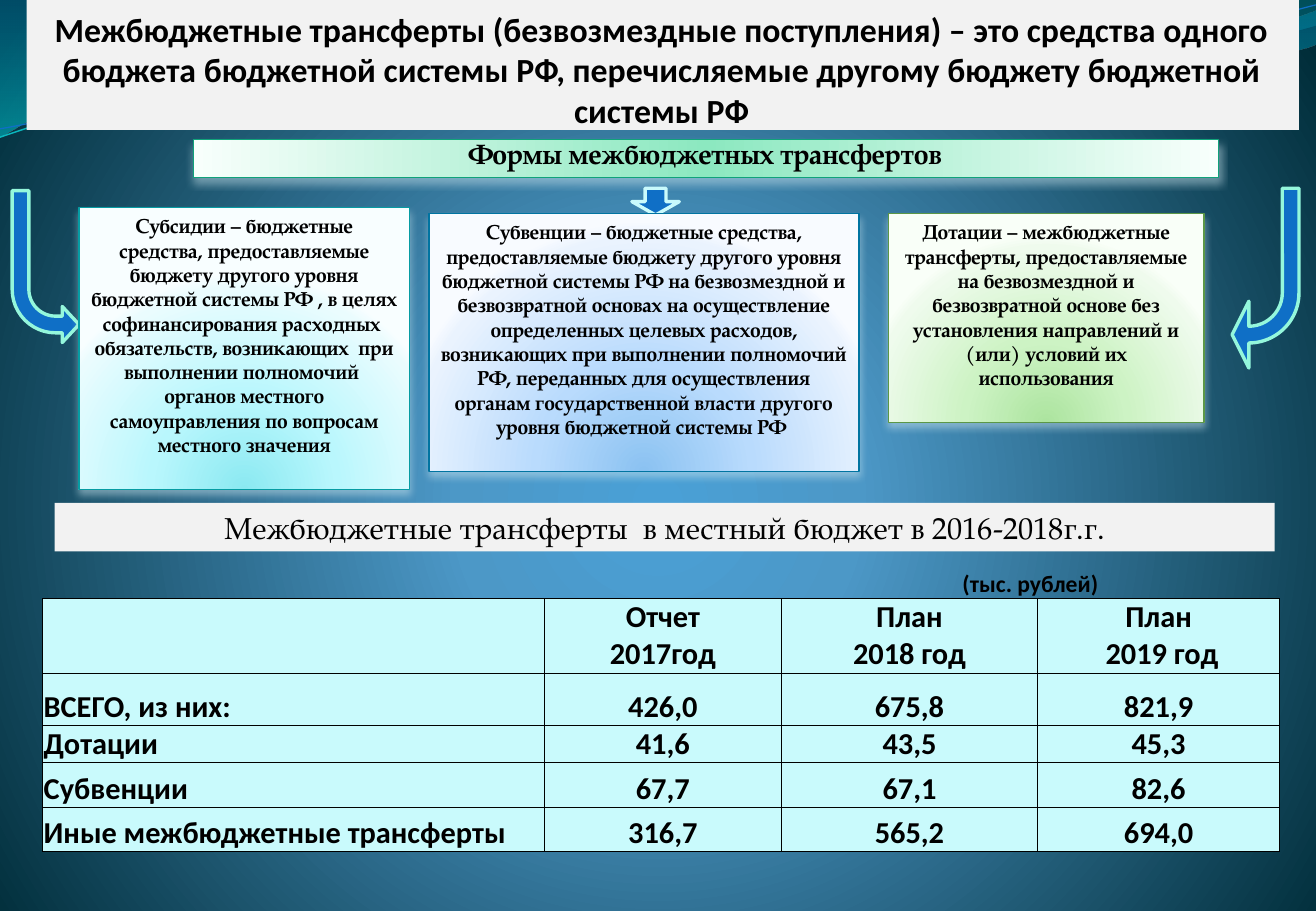
from pptx import Presentation
from pptx.dml.color import RGBColor
from pptx.enum.shapes import MSO_SHAPE as Shape
from pptx.enum.text import MSO_ANCHOR as Anchor, MSO_AUTO_SIZE as AutoSize, PP_ALIGN as Align
from pptx.oxml import parse_xml
from pptx.oxml.ns import nsdecls, qn
from pptx.util import Emu, Pt

PX = 9144
SERIF = "TeX Gyre Pagella"
SANS = "Calibri"
PANEL, CELL, ARROW, GLOW = "F2F2F2", "C9FAFC", "0F6FC6", "CFE8F0"
NO_GRID_STYLE = "{2D5ABB26-0587-4C30-8999-92F81FD0307C}"

WAVES = [
    ((0, 0), [[(477, 0)], [(515, 17), (719, 63), (822, 63)], [(924, 63), (1038, 26), (1083, 9)],
              [(1085, 36)], [(1065, 44), (942, 76), (808, 75)], [(674, 74), (414, 28), (279, 34)],
              [(140, 35), (50, 83), (-1, 113)]],
     [(0, "0074A1", 45), (100, "00C6CF", 55)]),
    ((519, -1), [[(552, 11), (739, 62), (833, 65)], [(927, 69), (1042, 32), (1083, 21)], [(1083, 0)]],
     [(0, "00A1A9", 30), (80, "008BBF", 45)]),
]
RIPPLES = [
    ((0, 113), [[(52, 95), (171, 58), (300, 53)], [(428, 47), (642, 88), (772, 79)],
                [(902, 69), (1017, 14), (1081, -4)]], "0AB8BF", 0.85),
    ((0, 106), [[(51, 98), (177, 62), (307, 57)], [(436, 52), (647, 83), (776, 74)],
                [(906, 66), (1020, 19), (1083, 4)]], "0F6FC6", 0.75),
]
TRANSFER_KINDS = [
    ((65, 171, 272, 232), ["8BE9F1", "B9F7FD", "EAFCFE", "F8FEFF"], "069CA3",
     "Субсидии – бюджетные\vсредства, предоставляемые бюджету другого уровня бюджетной системы РФ , "
     "в целях софинансирования расходных  обязательств, возникающих  при выполнении полномочий  "
     "органов местного самоуправления по вопросам местного значения"),
    ((731, 176, 260, 172), ["ACE49F", "CDF3C4", "EFFBED", "F9FFF8"], "5B9747",
     "Дотации – межбюджетные трансферты, предоставляемые на безвозмездной и безвозвратной основе "
     "без установления направлений и (или) условий их использования"),
    ((353, 176, 354, 212), ["8BC2F1", "B9DBFD", "EAF3FE", "F8FBFF"], "0074A1",
     "Субвенции – бюджетные средства, предоставляемые бюджету другого уровня бюджетной системы РФ "
     "на безвозмездной и безвозвратной основах на осуществление определенных целевых расходов, "
     "возникающих при выполнении полномочий РФ, переданных для осуществления органам "
     "государственной власти другого уровня бюджетной системы РФ "),
]
ARROWS = [
    (Shape.DOWN_ARROW, (520, 155, 39, 22), [0.44, 0.5], [], "C9FAFC"),
    (Shape.BENT_ARROW, (10, 157, 55, 125), [0.25, 0.27, 0.25, 0.65], ["flipV"], "94F7DC"),
    (Shape.BENT_ARROW, (1014, 155, 55, 148), [0.25, 0.5, 0.25, 0.75], ["flipH", "flipV"], "94F7DC"),
]
BUDGET_ROWS = [
    ["", "", "(тыс. рублей)", ""],
    ["", "Отчет\n2017год", "План\n2018 год", "План\n 2019 год"],
    ["ВСЕГО, из них:", "426,0", "675,8", "821,9"],
    ["Дотации", "41,6", "43,5", "45,3"],
    ["Субвенции", "67,7", "67,1", "82,6"],
    ["Иные межбюджетные трансферты", "316,7", "565,2", "694,0"],
]
COLUMN_WIDTHS = [413, 195, 211, 199]
ROW_HEIGHTS = [24, 61, 43, 31, 37, 36]


def px(length):
    return Emu(round(length * PX))


def apply_format(target, values):
    for name, value in values.items():
        setattr(target, name, value)


def color(target, value):
    if hasattr(target, "solid"):
        target.solid()
        target = target.fore_color
    else:
        target = target.color
    target.rgb = RGBColor.from_string(value)


def gradient(props, stops, direction):
    marks = "".join(
        f'<a:gs pos="{pos * 1000}"><a:srgbClr val="{value}"><a:alpha val="{alpha * 1000}"/></a:srgbClr></a:gs>'
        for pos, value, alpha in stops)
    solid = props.find(qn("a:solidFill"))
    props.replace(solid, parse_xml(
        f'<a:gradFill {nsdecls("a")} rotWithShape="1"><a:gsLst>{marks}</a:gsLst>{direction}</a:gradFill>'))


def linear(degrees):
    return f'<a:lin ang="{degrees * 60000}" scaled="0"/>'


def circular(left, top, right, bottom):
    sides = zip("ltrb", (left, top, right, bottom))
    rect = " ".join(f'{side}="{value * 1000}"' for side, value in sides)
    return f'<a:path path="circle"><a:fillToRect {rect}/></a:path>'


def outline(shape, value, width):
    color(shape.line.fill, value)
    shape.line.width = Pt(width)


def drop_shadow(shape):
    shape.shadow.inherit = False
    shape._element.spPr.find(qn("a:effectLst")).append(parse_xml(
        f'<a:outerShdw {nsdecls("a")} blurRad="{Pt(4.5)}" dist="{Pt(3)}" dir="5400000" rotWithShape="0">'
        f'<a:srgbClr val="{GLOW}"><a:alpha val="48000"/></a:srgbClr></a:outerShdw>'))


def write(frame, text, size, family=SERIF, bold=True, align=Align.CENTER, **spacing):
    for index, line in enumerate(text.split("\n")):
        paragraph = frame.add_paragraph() if index else frame.paragraphs[0]
        apply_format(paragraph, {"alignment": align, **spacing})
        if not line:
            paragraph._p.get_or_add_endParaRPr().set("sz", str(size * 100))
            continue
        for part, piece in enumerate(line.split("\v")):
            if part:
                paragraph.add_line_break()
            run = paragraph.add_run()
            run.text = piece
            apply_format(run.font, {"name": family, "size": Pt(size), "bold": bold})
            color(run.font, "000000")


def place(shape, box):
    apply_format(shape, dict(zip(("left", "top", "width", "height"), map(px, box))))


def set_frame(shape, **values):
    apply_format(shape.text_frame, {"word_wrap": True, "auto_size": AutoSize.NONE,
                                    "vertical_anchor": Anchor.TOP, **values})


def add_panel(slide, box, fill):
    panel = slide.shapes.add_shape(Shape.RECTANGLE, *map(px, box))
    panel.shadow.inherit = False
    color(panel.fill, fill)
    panel.line.fill.background()
    set_frame(panel)
    return panel


def add_curve(slide, start, segments, closed):
    points = [tuple(map(px, point)) for segment in segments for point in segment]
    builder = slide.shapes.build_freeform(*map(px, start), scale=1.0)
    builder.add_line_segments(points, close=closed)
    curve = builder.convert_to_shape()
    curve.shadow.inherit = False
    steps = iter(list(curve._element.iter(qn("a:lnTo"))))
    for segment in segments:
        first, *others = [next(steps) for _ in segment]
        if others:
            bezier = parse_xml(f'<a:cubicBezTo {nsdecls("a")}/>')
            first.addprevious(bezier)
            for step in (first, *others):
                bezier.append(step[0])
                step.getparent().remove(step)
    return curve


def add_backdrop(slide):
    color(slide.background.fill, "4AA0D6")
    gradient(slide._element.find(".//" + qn("p:bgPr")),
             [(0, "4AA0D6", 100), (25, "4C98C7", 100), (100, "002C38", 100)], circular(10, 110, 10, 100))
    for start, segments, stops in WAVES:
        wave = add_curve(slide, start, segments, True)
        color(wave.fill, stops[0][1])
        gradient(wave._element.spPr, stops, linear(90))
        wave.line.fill.background()
    for start, segments, value, width in RIPPLES:
        ripple = add_curve(slide, start, segments, False)
        ripple.fill.background()
        outline(ripple, value, width)


def add_headings(slide):
    definition, forms = slide.placeholders
    for heading in (definition, forms):
        slide.shapes._spTree.append(heading._element)
    place(definition, (22, 0, 1047, 107))
    color(definition.fill, PANEL)
    margins = {"margin_left": 0, "margin_right": px(2)}
    set_frame(definition, vertical_anchor=Anchor.BOTTOM, margin_top=0, margin_bottom=0, **margins)
    write(definition.text_frame, "Межбюджетные трансферты (безвозмездные поступления) – это средства одного "
          "бюджета бюджетной системы РФ, перечисляемые другому бюджету бюджетной системы РФ", 20, SANS)
    place(forms, (159, 115, 844, 31))
    color(forms.fill, PANEL)
    gradient(forms._element.spPr, [(0, "F8FFFC", 100), (50, "8CE8C0", 100), (100, "F8FFFC", 100)], linear(0))
    outline(forms, "10A27A", 0.75)
    drop_shadow(forms)
    set_frame(forms, **margins)
    write(forms.text_frame, "Формы межбюджетных трансфертов", 16.6, line_spacing=0.7, space_before=Pt(3.3))


def add_arrow(slide, preset, box, adjustments, flips, edge):
    arrow = slide.shapes.add_shape(preset, *map(px, box))
    arrow.shadow.inherit = False
    for index, value in enumerate(adjustments):
        arrow.adjustments[index] = value
    for flip in flips:
        arrow._element.spPr.find(qn("a:xfrm")).set(flip, "1")
    color(arrow.fill, ARROW)
    outline(arrow, edge, 2)


def add_transfer_kind(slide, box, shades, edge, text):
    card = add_panel(slide, box, shades[0])
    stops = [(pos, value, 100) for pos, value in zip((0, 43, 93, 100), shades)]
    gradient(card._element.spPr, stops, circular(50, 130, 50, -30))
    outline(card, edge, 0.75)
    drop_shadow(card)
    write(card.text_frame, text, 12)


def add_border(cell, sides):
    for side in sides:
        cell._tc.get_or_add_tcPr().append(parse_xml(
            f'<a:ln{side} {nsdecls("a")} w="{Pt(0.5)}"><a:solidFill><a:srgbClr val="000000"/></a:solidFill></a:ln{side}>'))


def add_budget_table(slide):
    budget = slide.shapes.add_table(len(ROW_HEIGHTS), len(COLUMN_WIDTHS), px(35), px(469),
                                    px(sum(COLUMN_WIDTHS)), px(sum(ROW_HEIGHTS))).table
    apply_format(budget, {"first_row": False, "horz_banding": False})
    budget._tbl.tblPr.find(qn("a:tableStyleId")).text = NO_GRID_STYLE
    for column, width in zip(budget.columns, COLUMN_WIDTHS):
        column.width = px(width)
    for row, height in zip(budget.rows, ROW_HEIGHTS):
        row.height = px(height)
    for r, texts in enumerate(BUDGET_ROWS):
        for c, text in enumerate(texts):
            cell = budget.cell(r, c)
            apply_format(cell, {"margin_left": px(1), "margin_right": px(1), "margin_top": 0,
                                "margin_bottom": 0, "vertical_anchor": Anchor.TOP if r == 1 else Anchor.BOTTOM})
            add_border(cell, "LRTB" if r else "B")
            if r:
                color(cell.fill, CELL)
            else:
                cell.fill.background()
            write(cell.text_frame, text, 18 if r else 14, SANS, align=Align.CENTER if c else Align.LEFT)
    budget.cell(0, 2).merge(budget.cell(0, 3))


def main():
    deck = Presentation()
    apply_format(deck, {"slide_width": px(1083), "slide_height": px(750)})
    slide = deck.slides.add_slide(deck.slide_layouts[0])
    add_backdrop(slide)
    add_headings(slide)
    for arrow in ARROWS:
        add_arrow(slide, *arrow)
    for kind in TRANSFER_KINDS:
        add_transfer_kind(slide, *kind)
    period = add_panel(slide, (45, 414, 1004, 40), PANEL)
    write(period.text_frame, "Межбюджетные трансферты  в местный бюджет в 2016-2018г.г.", 18, bold=False)
    add_budget_table(slide)
    deck.save("out.pptx")


if __name__ == "__main__":
    main()
